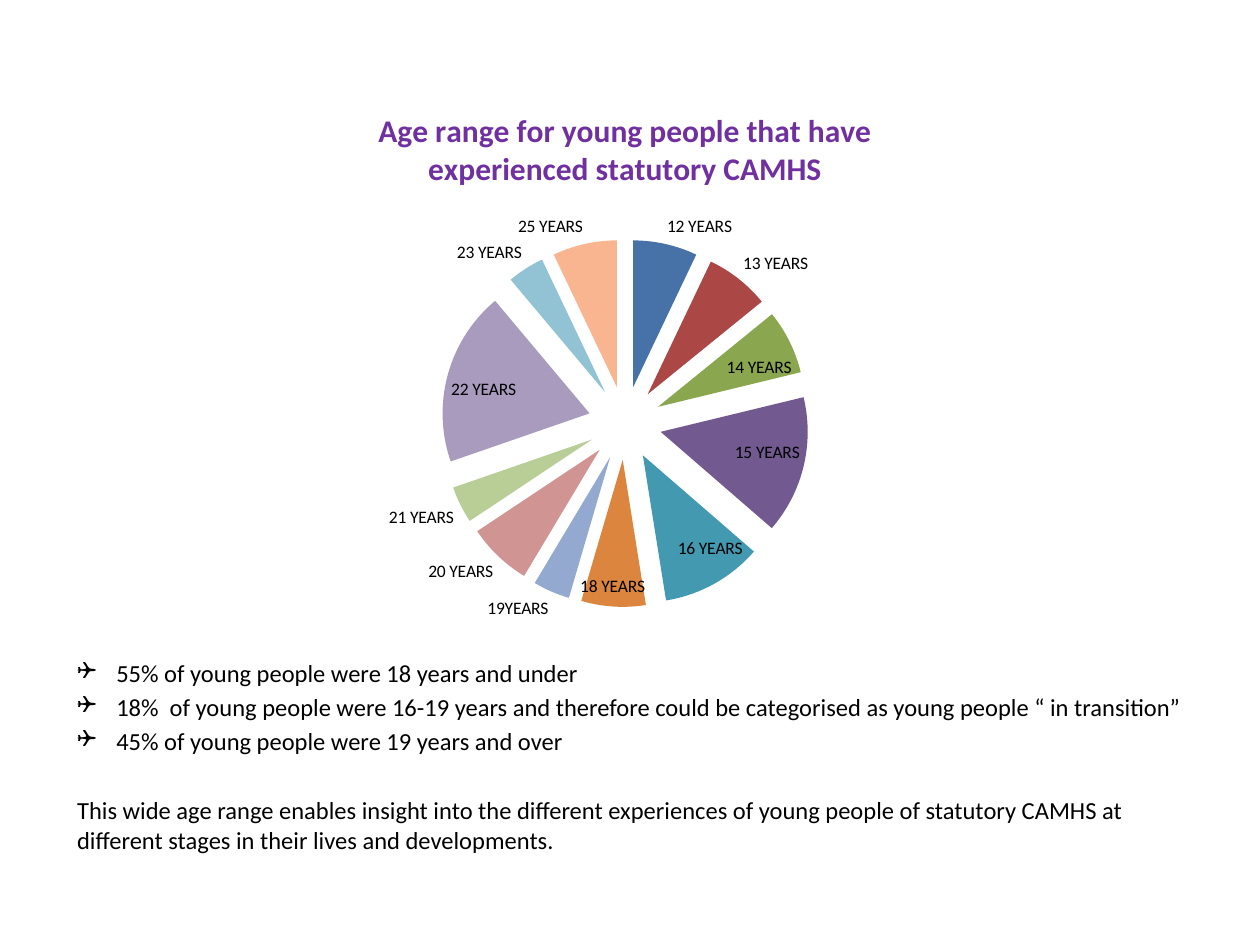
from lxml.etree import SubElement
from pptx import Presentation
from pptx.chart.data import CategoryChartData
from pptx.dml.color import RGBColor
from pptx.enum.chart import XL_CHART_TYPE as ChartType, XL_LABEL_POSITION as LabelPosition
from pptx.enum.text import MSO_ANCHOR as Anchor, MSO_AUTO_SIZE as AutoSize
from pptx.oxml import parse_xml
from pptx.oxml.ns import nsdecls, qn
from pptx.util import Cm, Pt

FONT = "Calibri"
CHART_TITLE = "Age range for young people that have experienced statutory CAMHS"
AGES = [
    ("12 YEARS", 7, "4672A8"),
    ("13 YEARS", 7, "AB4744"),
    ("14 YEARS", 7, "8AA64F"),
    ("15 YEARS", 15, "725990"),
    ("16 YEARS", 11, "4299B0"),
    ("18 YEARS", 7, "DC853E"),
    ("19YEARS", 4, "93A9CF"),
    ("20 YEARS", 7, "D09493"),
    ("21 YEARS", 4, "B9CD97"),
    ("22 YEARS", 19, "A99BBD"),
    ("23 YEARS", 4, "91C3D5"),
    ("25 YEARS", 7, "F9B590"),
]
FINDINGS = [
    "55% of young people were 18 years and under",
    "18%  of young people were 16-19 years and therefore could be categorised as young people “ in transition”",
    "45% of young people were 19 years and over",
]
CONCLUSION = (
    "This wide age range enables insight into the different experiences of young people "
    "of statutory CAMHS at different stages in their lives and developments."
)


def color(value):
    return RGBColor.from_string(value)


def style_font(font, size, value, bold=False):
    font.name = FONT
    font.size = Pt(size)
    font.bold = bold
    font.color.rgb = color(value)


def set_bullet(paragraph, symbol=None):
    properties = paragraph._p.get_or_add_pPr()
    indent = Cm(0.79) if symbol else 0
    properties.set("marL", str(indent))
    properties.set("indent", str(-indent))
    if symbol:
        SubElement(properties, qn("a:buFont"), typeface="Wingdings")
        SubElement(properties, qn("a:buChar"), char=symbol)
    else:
        SubElement(properties, qn("a:buNone"))


def add_paragraph(paragraph, text, space_before, symbol=None):
    paragraph.space_before = Pt(space_before)
    set_bullet(paragraph, symbol)
    run = paragraph.add_run()
    run.text = text
    style_font(run.font, 14, "000000")


def fill_body(body):
    body.left, body.top, body.width, body.height = Cm(1.3), Cm(13.13), Cm(22.8), Cm(4.01)
    frame = body.text_frame
    frame.word_wrap = True
    frame.auto_size = AutoSize.NONE
    frame.vertical_anchor = Anchor.TOP
    for index, finding in enumerate(FINDINGS):
        paragraph = frame.add_paragraph() if index else frame.paragraphs[0]
        add_paragraph(paragraph, finding, 2.8, "❑")
    add_paragraph(frame.add_paragraph(), CONCLUSION, 22.5)


def add_age_chart(slide):
    data = CategoryChartData()
    data.categories = [age for age, _, _ in AGES]
    data.add_series("Series 1", [share for _, share, _ in AGES])
    chart = slide.shapes.add_chart(
        ChartType.PIE, Cm(4.98), Cm(1.7), Cm(15.24), Cm(11.43), data
    ).chart
    style_font(chart.font, 10, "000000")
    chart.has_legend = False
    chart.has_title = True
    run = chart.chart_title.text_frame.paragraphs[0].add_run()
    run.text = CHART_TITLE
    style_font(run.font, 18, "7030A0", bold=True)

    plot = chart.plots[0]
    plot.vary_by_categories = True
    plot.has_data_labels = True
    labels = plot.data_labels
    labels.show_category_name = True
    labels.show_value = False
    labels.show_percentage = False
    labels.position = LabelPosition.BEST_FIT
    style_font(labels.font, 10, "000000")

    series = plot.series[0]
    explosion = parse_xml(f'<c:explosion {nsdecls("c")} val="25"/>')
    series._element.find(qn("c:tx")).addnext(explosion)
    for index, (_, _, value) in enumerate(AGES):
        fill = series.points[index].format.fill
        fill.solid()
        fill.fore_color.rgb = color(value)


def main():
    presentation = Presentation()
    presentation.slide_width = Cm(25.4)
    presentation.slide_height = Cm(19.05)
    slide = presentation.slides.add_slide(presentation.slide_layouts[1])
    title = slide.shapes.title._element
    title.getparent().remove(title)
    fill_body(slide.placeholders[1])
    add_age_chart(slide)
    presentation.save("out.pptx")


if __name__ == "__main__":
    main()
